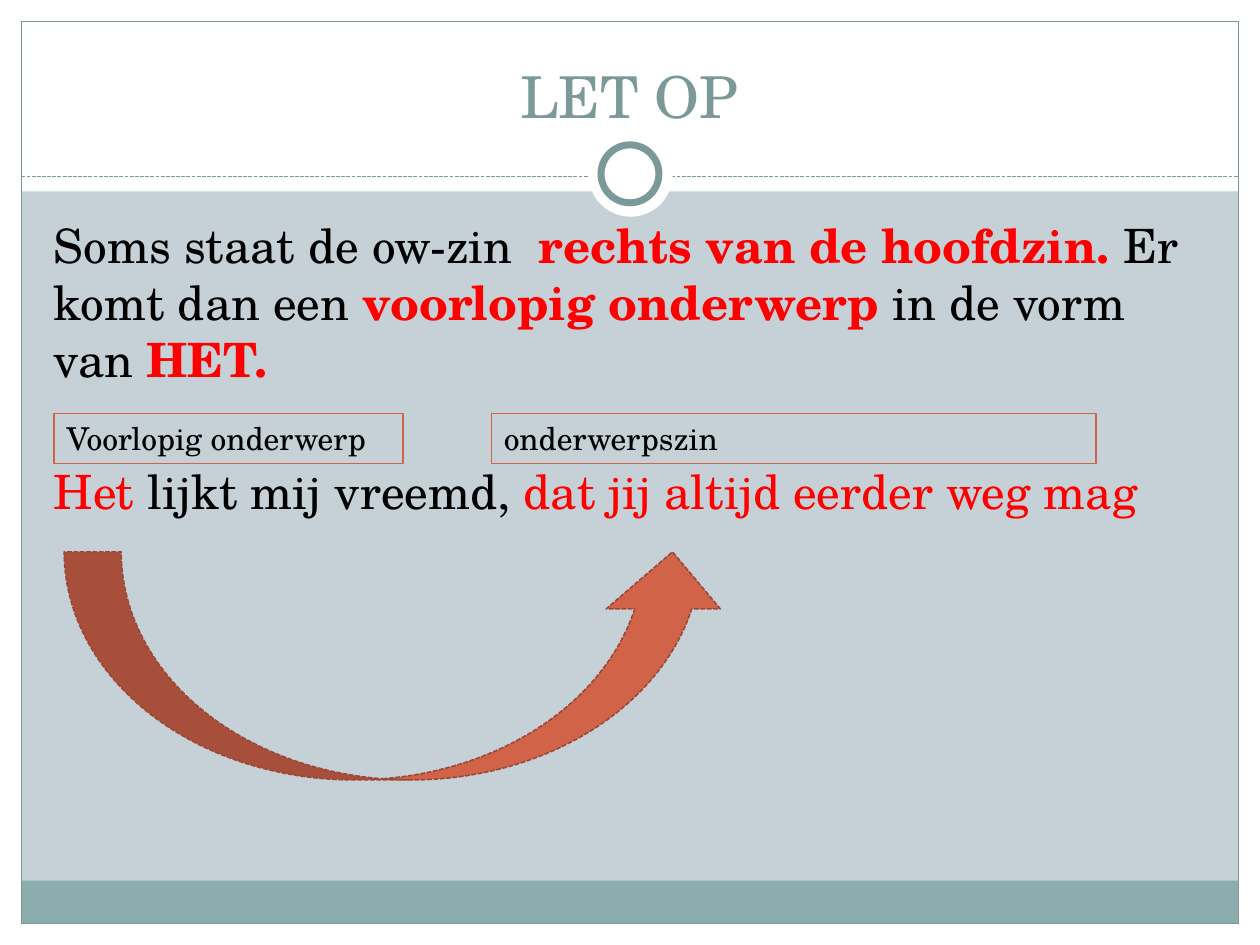
import pptx
import pptx.util
import pptx.dml.color
import pptx.enum.dml
import pptx.enum.shapes
import pptx.enum.text
import pptx.oxml.ns
import lxml.etree

RGBColor = pptx.dml.color.RGBColor
WHITE = RGBColor(0xFF, 0xFF, 0xFF)
BLACK = RGBColor(0x00, 0x00, 0x00)
RED = RGBColor(0xFF, 0x00, 0x00)
MIST = RGBColor(0xC5, 0xD1, 0xD7)
TEAL = RGBColor(0x8C, 0xAD, 0xAE)
SLATE = RGBColor(0x7C, 0x99, 0x9A)
RUST = RGBColor(0xD1, 0x63, 0x49)
DARK_RUST = RGBColor(0x9B, 0x49, 0x36)

FONT = "TeX Gyre Schola"
EMU_PER_PX = 9144
WIDTH, HEIGHT = 1000, 750
MARGIN = 17
HEADER_HEIGHT = 152

SHAPE = pptx.enum.shapes.MSO_SHAPE
DASH = pptx.enum.dml.MSO_LINE.SQUARE_DOT
ALIGN = pptx.enum.text.PP_ALIGN
ANCHOR = pptx.enum.text.MSO_ANCHOR
AUTO_SIZE = pptx.enum.text.MSO_AUTO_SIZE


def px(*lengths):
    return [pptx.util.Emu(length * EMU_PER_PX) for length in lengths]


def style_line(line, color, points, dash=None):
    line.color.rgb = color
    line.width = pptx.util.Pt(points)
    if dash is not None:
        line.dash_style = dash


def add_figure(slide, kind, box, fill=None, outline=None):
    figure = slide.shapes.add_shape(kind, *px(*box))
    figure.shadow.inherit = False
    if fill is None:
        figure.fill.background()
    else:
        figure.fill.solid()
        figure.fill.fore_color.rgb = fill
    if outline is None:
        figure.line.fill.background()
    else:
        style_line(figure.line, *outline)
    return figure


def style_font(font, size, color=None):
    font.name = FONT
    font.size = pptx.util.Pt(size)
    if color is not None:
        font.color.rgb = color


def add_frame(slide, box):
    left, top, width, height = box
    right, bottom = left + width, top + height
    inner_width = width - 2 * MARGIN
    bands = [
        ((left, bottom - MARGIN, width, MARGIN), WHITE),
        ((left, top, width, HEADER_HEIGHT), WHITE),
        ((left, top, MARGIN, height), WHITE),
        ((right - MARGIN, top, MARGIN, height), WHITE),
        ((left + MARGIN, bottom - 51, inner_width, 34), TEAL),
    ]
    for band, color in bands:
        add_figure(slide, SHAPE.RECTANGLE, band, color)
    border = (left + MARGIN, top + MARGIN, inner_width, height - 2 * MARGIN)
    add_figure(slide, SHAPE.RECTANGLE, border, outline=(SLATE, 0.75))


def add_header(slide, box):
    left, top, width, height = box
    divider_y = top + height - 12
    divider = slide.shapes.add_connector(
        pptx.enum.shapes.MSO_CONNECTOR.STRAIGHT,
        *px(left + MARGIN, divider_y, left + width - MARGIN, divider_y))
    style_line(divider.line, SLATE, 0.75, DASH)
    lxml.etree.SubElement(divider.element.spPr, pptx.oxml.ns.qn("a:effectLst"))

    center_x, center_y = left + width // 2, top + 138
    for diameter, outline in ((67, None), (46, (SLATE, 4))):
        ring = (center_x - diameter // 2, center_y - diameter // 2, diameter, diameter)
        add_figure(slide, SHAPE.OVAL, ring, WHITE, outline)

    title = slide.shapes.title
    slide.shapes.element.append(title.element)
    title.left, title.top, title.width, title.height = px(left + 33, top + 25, 933, 83)
    title.text_frame.text = "LET OP"
    title.text_frame.auto_size = AUTO_SIZE.NONE
    title.text_frame.vertical_anchor = ANCHOR.BOTTOM
    heading = title.text_frame.paragraphs[0]
    heading.alignment = ALIGN.CENTER
    style_font(heading.font, 33, SLATE)


def add_runs(paragraph, runs):
    style_font(paragraph.font, 27)
    for text, color, bold in runs:
        run = paragraph.add_run()
        run.text = text
        run.font.color.rgb = color
        run.font.bold = bold


def add_explanation(slide, box):
    frame = slide.shapes.add_textbox(*px(*box)).text_frame
    frame.word_wrap = True
    rule = frame.paragraphs[0]
    add_runs(rule, [
        ("Soms staat de ow-zin  ", BLACK, False),
        ("rechts van de hoofdzin. ", RED, True),
        ("Er komt dan een ", BLACK, False),
        ("voorlopig onderwerp ", RED, True),
        ("in de vorm van ", BLACK, False),
        ("HET.", RED, True),
    ])
    example = frame.add_paragraph()
    example.space_before = pptx.util.Pt(43)
    add_runs(example, [
        ("Het", RED, False),
        (" lijkt mij vreemd, ", BLACK, False),
        ("dat jij altijd eerder weg mag", RED, False),
    ])


def add_label(slide, box, text):
    label = add_figure(slide, SHAPE.RECTANGLE, box, outline=(RUST, 0.75))
    frame = label.text_frame
    frame.word_wrap = True
    frame.auto_size = AUTO_SIZE.SHAPE_TO_FIT_TEXT
    frame.vertical_anchor = ANCHOR.TOP
    frame.text = text
    frame.paragraphs[0].alignment = ALIGN.LEFT
    style_font(frame.paragraphs[0].font, 18, BLACK)


def add_annotations(slide, box):
    left, top, _, _ = box
    add_figure(slide, SHAPE.CURVED_UP_ARROW, (left + 8, top + 110, 528, 181),
               RUST, (DARK_RUST, 0.9, DASH))
    add_label(slide, (left + 347, top, 480, 40), "onderwerpszin")
    add_label(slide, (left, top, 277, 40), "Voorlopig onderwerp")


def main():
    presentation = pptx.Presentation()
    presentation.slide_width, presentation.slide_height = px(WIDTH, HEIGHT)
    slide = presentation.slides.add_slide(presentation.slide_layouts[5])
    slide.background.fill.solid()
    slide.background.fill.fore_color.rgb = MIST
    add_frame(slide, (0, 0, WIDTH, HEIGHT))
    add_header(slide, (0, 0, WIDTH, HEADER_HEIGHT))
    add_explanation(slide, (33, 167, 930, 500))
    add_annotations(slide, (43, 328, 827, 291))
    presentation.save("out.pptx")


if __name__ == "__main__":
    main()
